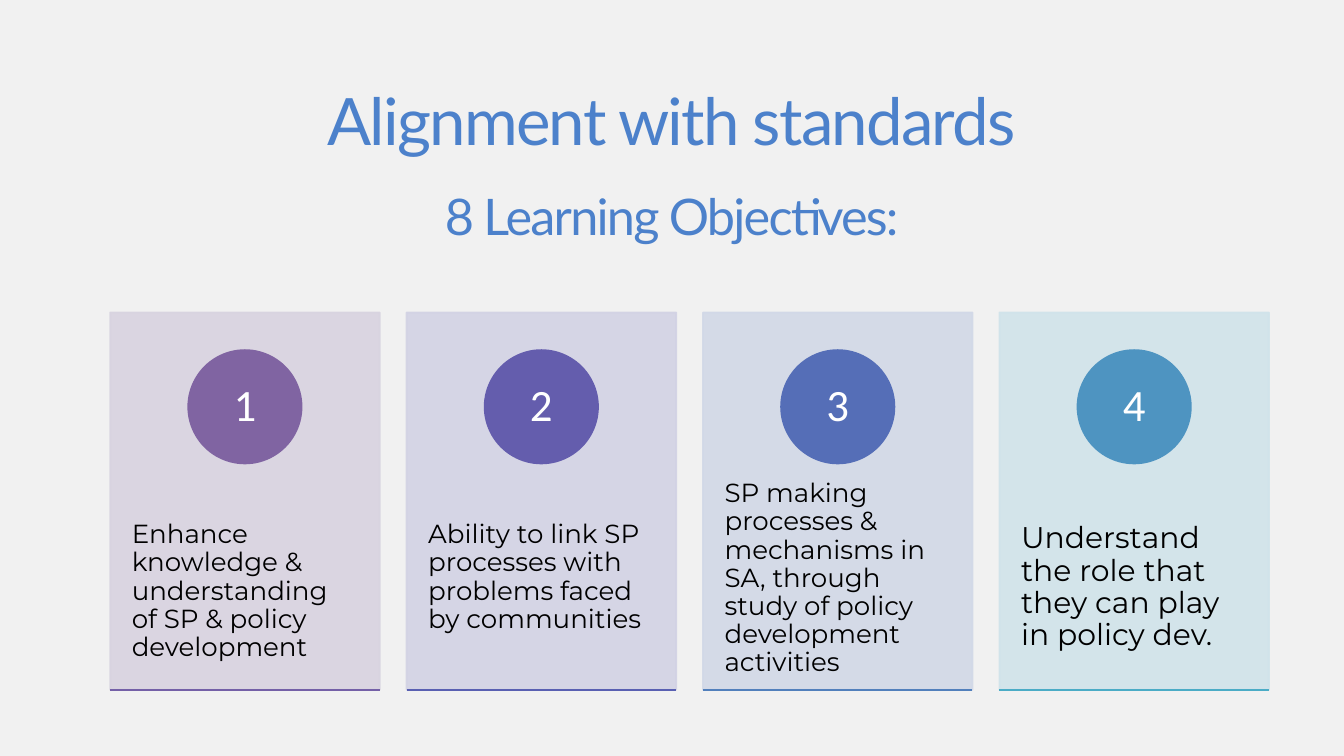
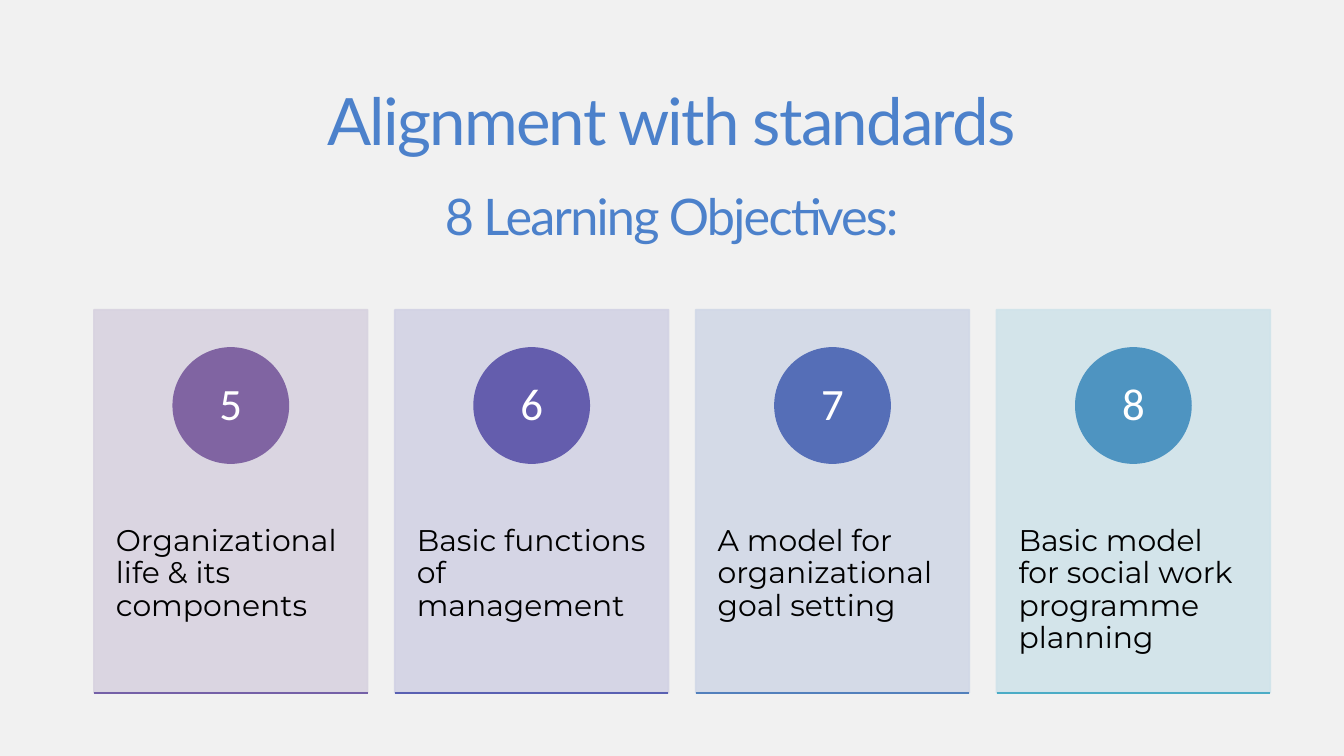
from lxml.etree import SubElement
from pptx import Presentation
from pptx.dml.color import RGBColor
from pptx.enum.shapes import MSO_CONNECTOR, MSO_SHAPE
from pptx.enum.text import MSO_ANCHOR, MSO_AUTO_SIZE, PP_ALIGN
from pptx.oxml.ns import qn
from pptx.util import Inches, Pt

BACKGROUND, TITLE_BLUE, BLACK, WHITE = "F1F1F1", "4C81CB", "000000", "FFFFFF"
# Panel, circle and base line colour of each column
COLUMNS = [
    ("D8D3E0", "8064A2", "7460A7"),
    ("D2D2E4", "645DAD", "5960B2"),
    ("D1D8E7", "556EB7", "5280BC"),
    ("D0E3EA", "4E94C1", "4BACC6"),
]


def rgb(color):
    return RGBColor.from_string(color)


class Deck:
    def __init__(self):
        self.prs = Presentation()
        self.prs.slide_width, self.prs.slide_height = Inches(20), Inches(11.25)
        fill = self.prs.slide_master.background.fill
        fill.solid()
        fill.fore_color.rgb = rgb(BACKGROUND)
        self.s = None

    def new_slide(self, *title_lines):
        self.s = self.prs.slides.add_slide(self.prs.slide_layouts[5])
        sp = self.s.shapes.title
        sp.left, sp.top, sp.width, sp.height = map(Inches, (1.12, 1.07, 17.75, 2.56))
        tf = self.frame(sp, MSO_ANCHOR.TOP)
        for i, (text, size) in enumerate(title_lines):
            p = tf.add_paragraph() if i else tf.paragraphs[0]
            self.paragraph(p, text, "Lato", size, TITLE_BLUE, PP_ALIGN.CENTER)
            p.line_spacing = Pt(93.1)
            p.runs[0].font._element.set("spc", "-190")

    def frame(self, sp, anchor, side=0, top=0):
        tf = sp.text_frame
        tf.word_wrap, tf.auto_size = True, MSO_AUTO_SIZE.NONE
        tf.vertical_anchor = anchor
        tf.margin_left = tf.margin_right = Inches(side)
        tf.margin_top, tf.margin_bottom = Inches(top), 0
        return tf

    def paragraph(self, p, text, font, size, color, align=PP_ALIGN.LEFT):
        p.add_run().text = text
        p.alignment, p.line_spacing = align, 0.9
        p.font.name, p.font.size = font, Pt(size)
        p.font.color.rgb = rgb(color)

    def shape(self, kind, x, y, w, h, color, opacity=100):
        sp = self.s.shapes.add_shape(kind, *map(Inches, (x, y, w, h)))
        sp.shadow.inherit = False
        sp.line.width = Pt(2)
        for fill in (sp.fill, sp.line.fill):
            fill.solid()
            fill.fore_color.rgb = rgb(color)
        if opacity < 100:
            for clr in sp._element.spPr.iter(qn("a:srgbClr")):
                SubElement(clr, qn("a:alpha")).set("val", str(opacity * 1000))
        return sp

    def line(self, x, y, w, color):
        cxn = self.s.shapes.add_connector(
            MSO_CONNECTOR.STRAIGHT, *map(Inches, (x, y, x + w, y)))
        cxn.line.color.rgb, cxn.line.width = rgb(color), Pt(2)
        SubElement(cxn._element.spPr, qn("a:effectLst"))

    def text(self, x, y, w, h, text, size, side, top):
        sp = self.s.shapes.add_textbox(*map(Inches, (x, y, w, h)))
        tf = self.frame(sp, MSO_ANCHOR.TOP, side, top)
        self.paragraph(tf.paragraphs[0], text, "Montserrat", size, BLACK)

    def card(self, x, y, w, number, objective, colors):
        text, size, lead = objective
        panel, circle, base = colors
        h, d = 1.4 * w, 0.42 * w
        self.shape(MSO_SHAPE.RECTANGLE, x, y, w, h, panel, 90)
        self.text(x, y + 0.38 * h, w, 0.6 * h, text, size, 0.08 * w, 0.36 + lead)
        sp = self.shape(MSO_SHAPE.OVAL, x + (w - d) / 2, y + 0.1 * h, d, d, circle)
        tf = self.frame(sp, MSO_ANCHOR.MIDDLE)
        self.paragraph(tf.paragraphs[0], str(number), "Calibri", 48, WHITE,
                       PP_ALIGN.CENTER)
        self.line(x, y + h, w, base)

    def objectives(self, x, y, w, first, items):
        for i, (item, colors) in enumerate(zip(items, COLUMNS)):
            self.card(x + i * 1.1 * w, y, w, first + i, item, colors)


# Each objective: text, font size, extra space above
FIRST_FOUR = [
    ("Enhance knowledge & understanding of SP & policy development", 28, 0.61),
    ("Ability to link SP processes with problems faced by communities", 28, 0.61),
    ("SP making processes & mechanisms in SA, through study of policy "
     "development activities", 28, 0),
    ("Understand the role that they can play in policy dev.", 32, 0.64),
]
LAST_FOUR = [(text, 32, 0.69) for text in (
    "Organizational life & its components",
    "Basic functions of management",
    "A model for organizational goal setting",
    "Basic model for social work programme planning",
)]


def main():
    deck = Deck()
    # Left, top and width of the first card, its number, the objectives
    for row in ((1.64, 4.65, 4.01, 1, FIRST_FOUR), (1.4, 4.61, 4.07, 5, LAST_FOUR)):
        deck.new_slide(("Alignment with standards", 70), ("8 Learning Objectives:", 54))
        deck.objectives(*row)
    deck.prs.save("out.pptx")


if __name__ == "__main__":
    main()
